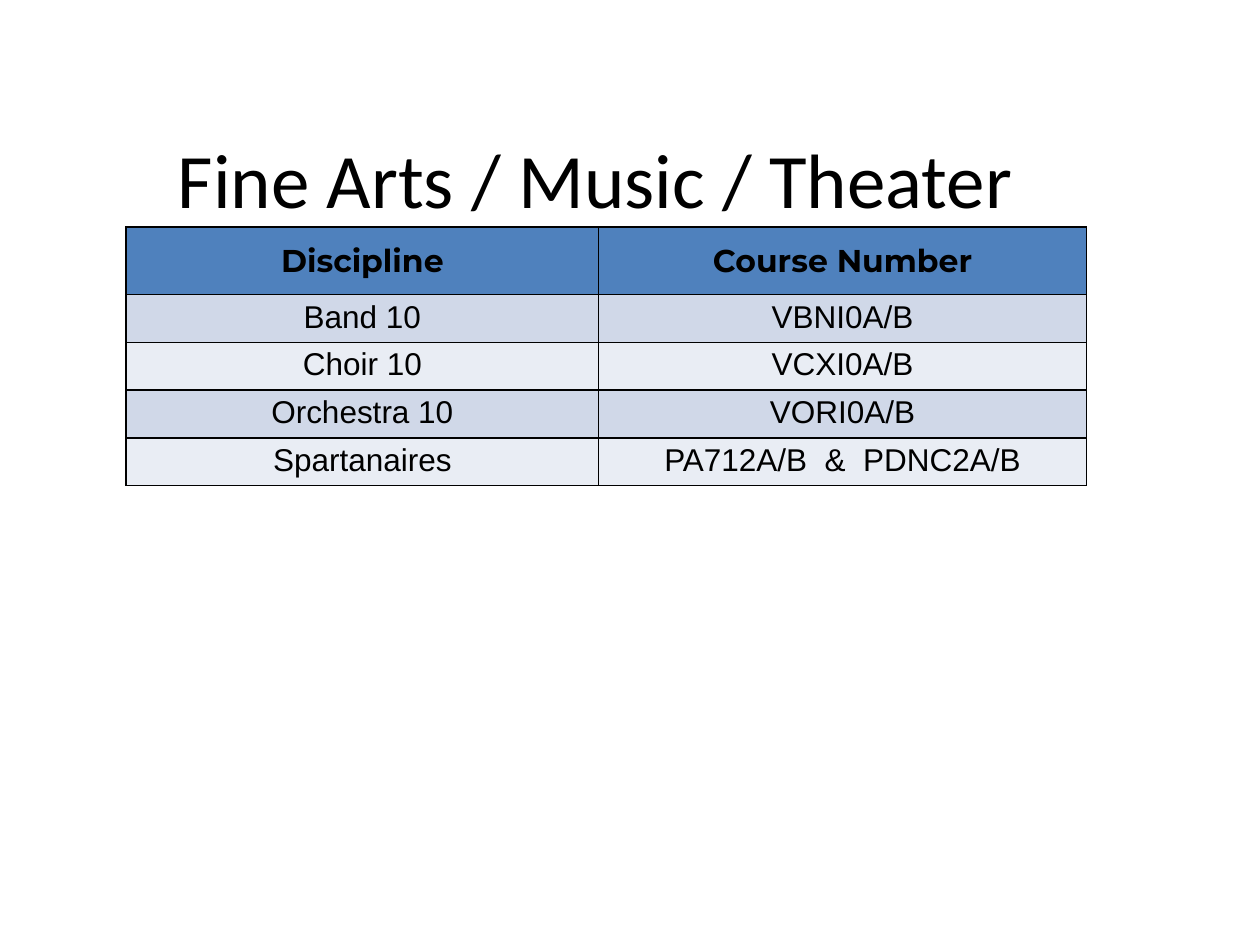
from lxml import etree
from pptx import Presentation
from pptx.dml.color import RGBColor
from pptx.enum.text import MSO_ANCHOR, PP_ALIGN
from pptx.oxml.ns import qn
from pptx.util import Cm, Pt

CENTER = PP_ALIGN.CENTER
MIDDLE, TOP = MSO_ANCHOR.MIDDLE, MSO_ANCHOR.TOP

BLACK = RGBColor(0x00, 0x00, 0x00)
HEADER_BLUE = RGBColor(0x4F, 0x81, 0xBD)
BAND_COLORS = (RGBColor(0xD0, 0xD8, 0xE8), RGBColor(0xE9, 0xED, 0xF4))

COURSES = [
    ("Discipline", "Course Number"),
    ("Band 10", "VBNI0A/B"),
    ("Choir 10", "VCXI0A/B"),
    ("Orchestra 10", "VORI0A/B"),
    ("Spartanaires", "PA712A/B  &  PDNC2A/B"),
]
COLUMN_WIDTHS = (Cm(9.53), Cm(9.83))
HEADER_HEIGHT, COURSE_HEIGHT = Cm(1.36), Cm(0.95)


def write_centered(frame, text, font_name, size, bold=False):
    paragraph = frame.paragraphs[0]
    paragraph.alignment = CENTER
    run = paragraph.add_run()
    run.text = text
    run.font.name = font_name
    run.font.size = Pt(size)
    run.font.bold = bold
    run.font.color.rgb = BLACK


def add_title(slide, left, top, width, height):
    frame = slide.shapes.add_textbox(left, top, width, height).text_frame
    frame.word_wrap = True
    frame.vertical_anchor = MIDDLE
    write_centered(frame, "Fine Arts / Music / Theater", "Calibri", 44)


def add_borders(cell):
    """Draw a thin black line on all four sides; borders must precede the fill."""
    properties = cell._tc.get_or_add_tcPr()
    for position, side in enumerate(("a:lnL", "a:lnR", "a:lnT", "a:lnB")):
        line = etree.Element(qn(side), w=str(Pt(1)))
        fill = etree.SubElement(line, qn("a:solidFill"))
        etree.SubElement(fill, qn("a:srgbClr"), val=str(BLACK))
        properties.insert(position, line)


def fill_cell(cell, text, is_header, color):
    cell.margin_left = cell.margin_right = Cm(0.19)
    cell.margin_top = cell.margin_bottom = Cm(0.1)
    cell.vertical_anchor = MIDDLE if is_header else TOP
    cell.fill.solid()
    cell.fill.fore_color.rgb = color
    add_borders(cell)
    font_name = "Montserrat" if is_header else "Arial"
    write_centered(cell.text_frame, text, font_name, 18, is_header)


def add_course_table(slide, left, top):
    height = HEADER_HEIGHT + COURSE_HEIGHT * (len(COURSES) - 1)
    table = slide.shapes.add_table(
        len(COURSES), len(COLUMN_WIDTHS), left, top, sum(COLUMN_WIDTHS), height
    ).table
    for column, width in zip(table.columns, COLUMN_WIDTHS):
        column.width = width
    for row_index, course in enumerate(COURSES):
        is_header = row_index == 0
        color = HEADER_BLUE if is_header else BAND_COLORS[(row_index - 1) % 2]
        table.rows[row_index].height = HEADER_HEIGHT if is_header else COURSE_HEIGHT
        for column_index, text in enumerate(course):
            fill_cell(table.cell(row_index, column_index), text, is_header, color)


def main():
    presentation = Presentation()
    presentation.slide_width = Cm(25.4)
    presentation.slide_height = Cm(19.05)
    slide = presentation.slides.add_slide(presentation.slide_layouts[6])
    add_title(slide, Cm(1.17), Cm(2.39), Cm(21.67), Cm(2.39))
    add_course_table(slide, Cm(2.54), Cm(4.58))
    presentation.save("out.pptx")


if __name__ == "__main__":
    main()
